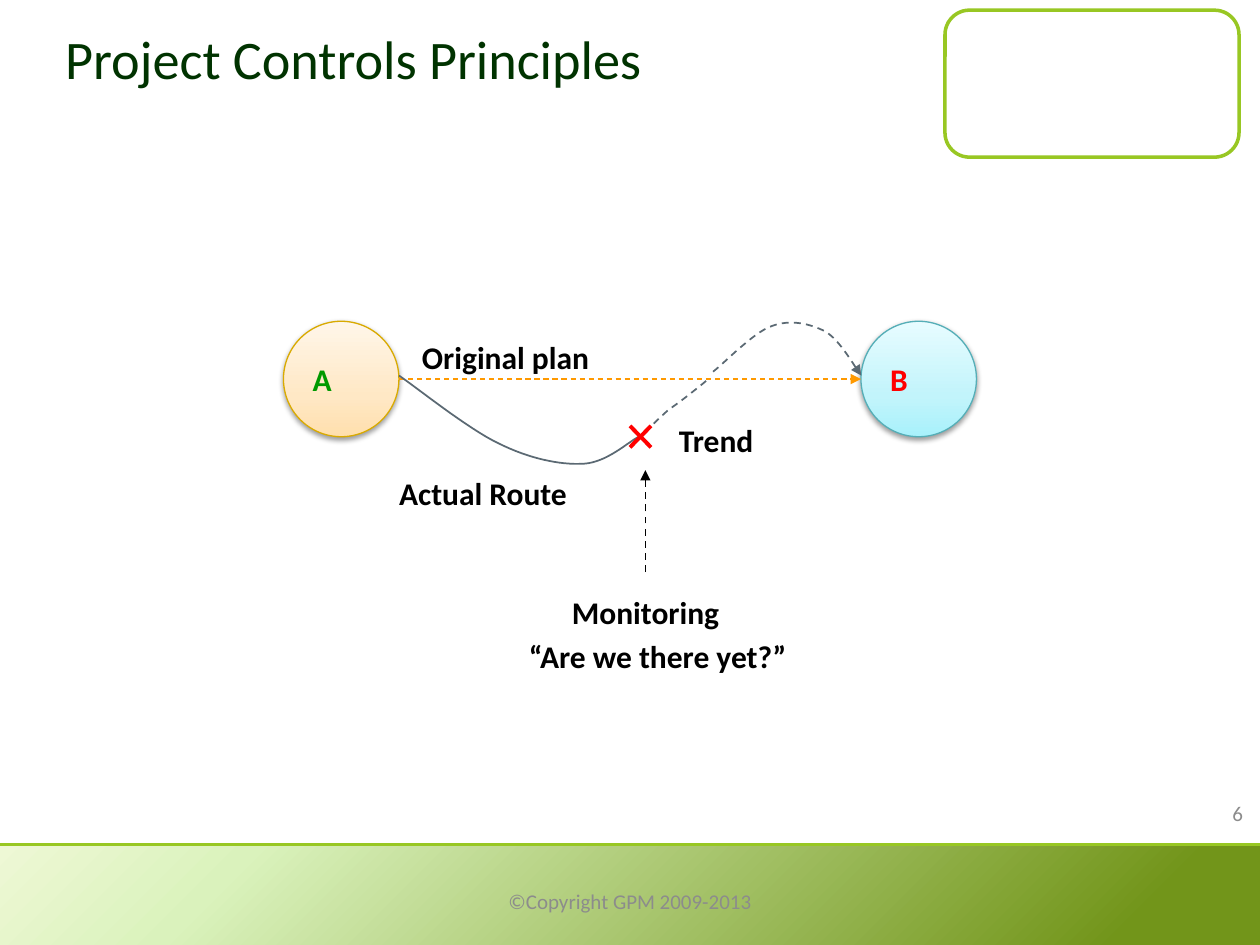
from lxml.etree import SubElement
from pptx import Presentation
from pptx.dml.color import RGBColor
from pptx.enum.dml import MSO_LINE
from pptx.enum.shapes import MSO_CONNECTOR, MSO_SHAPE
from pptx.enum.text import MSO_ANCHOR, PP_ALIGN
from pptx.oxml.ns import qn
from pptx.util import Pt

WHITE = RGBColor(0xFF, 0xFF, 0xFF)
BLACK = RGBColor(0, 0, 0)
RED = RGBColor(0xFF, 0, 0)
GREEN = RGBColor(0, 0x99, 0)
DARK_GREEN = RGBColor(0, 0x33, 0)
LIME = RGBColor(0x98, 0xC7, 0x23)
ORANGE = RGBColor(0xFF, 0x99, 0)
GOLD = RGBColor(0xD9, 0xAA, 0)
TEAL = RGBColor(0x55, 0xAE, 0xB7)
SLATE = RGBColor(0x5B, 0x69, 0x73)
GREY = RGBColor(0x8C, 0x8C, 0x8C)
BAND_STOPS = [(0, RGBColor(0xEE, 0xF8, 0xD5)), (19, RGBColor(0xDA, 0xF2, 0xBC)),
              (89, RGBColor(0x72, 0x95, 0x1A))]
START_STOPS = [(0, RGBColor(0xFF, 0xDF, 0xAD)), (35, RGBColor(0xFF, 0xE8, 0xC5)),
               (100, RGBColor(0xFF, 0xF6, 0xE9))]
GOAL_STOPS = [(0, RGBColor(0xA8, 0xF1, 0xFB)), (35, RGBColor(0xC2, 0xF4, 0xFB)),
              (100, RGBColor(0xE7, 0xFC, 0xFF))]


def bezier_points(start, curves, steps=16):
    points = [start]
    for first, second, end in curves:
        begin = points[-1]
        for step in range(1, steps + 1):
            t = step / steps
            weights = ((1 - t) ** 3, 3 * t * (1 - t) ** 2, 3 * t * t * (1 - t), t ** 3)
            corners = (begin, first, second, end)
            points.append(tuple(sum(w * corner[axis] for w, corner in zip(weights, corners))
                                for axis in (0, 1)))
    return points


class SlideBuilder:
    font = "Calibri"

    def __init__(self, slide):
        self.slide = slide
        self.shapes = slide.shapes

    def format_text(self, frame, text, size, color, bold=False, align=PP_ALIGN.LEFT,
                    anchor=MSO_ANCHOR.MIDDLE):
        frame.text = text
        frame.vertical_anchor = anchor
        para = frame.paragraphs[0]
        para.alignment = align
        span = para.runs[0]
        span.font.name = self.font
        span.font.size = Pt(size)
        span.font.bold = bold
        span.font.color.rgb = color

    def title(self, text, left, top, width, height):
        title = self.shapes.title
        title.left, title.top, title.width, title.height = map(Pt, (left, top, width, height))
        self.format_text(title.text_frame, text, 31, DARK_GREEN)

    def text(self, text, left, top, width, height, **style):
        box = self.shapes.add_textbox(Pt(left), Pt(top), Pt(width), Pt(height))
        box.text_frame.word_wrap = True
        self.format_text(box.text_frame, text, 12, GREY, **style)

    def label(self, text, left, top, width):
        box = self.shapes.add_textbox(Pt(left), Pt(top), Pt(width), Pt(29))
        box.text_frame.word_wrap = False
        self.format_text(box.text_frame, text, 18, BLACK, bold=True, anchor=MSO_ANCHOR.TOP)

    def shape(self, kind, left, top, width, height, line=None, weight=0.75):
        shape = self.shapes.add_shape(kind, Pt(left), Pt(top), Pt(width), Pt(height))
        shape.shadow.inherit = False
        shape.fill.solid()
        shape.fill.fore_color.rgb = WHITE
        if line is None:
            shape.line.fill.background()
        else:
            self.stroke(shape.line, line, weight)
        return shape

    def gradient(self, shape, stops, angle):
        shape.fill.gradient()
        shape.fill.gradient_angle = angle
        stop_list = next(shape._element.spPr.iter(qn("a:gsLst")))
        for stop in list(stop_list):
            stop_list.remove(stop)
        for position, color in stops:
            stop = SubElement(stop_list, qn("a:gs"), pos=str(position * 1000))
            SubElement(stop, qn("a:srgbClr"), val=str(color))

    def milestone(self, text, left, color, line, stops):
        circle = self.shape(MSO_SHAPE.OVAL, left, 183.6, 66, 66, line)
        self.gradient(circle, stops, 90)
        effects = circle._element.spPr.find(qn("a:effectLst"))
        shadow = SubElement(effects, qn("a:outerShdw"), blurRad=str(Pt(3.1)),
                            dist=str(Pt(1.6)), dir="5400000", rotWithShape="0")
        shade = SubElement(shadow, qn("a:srgbClr"), val=str(BLACK))
        SubElement(shade, qn("a:alpha"), val="38000")
        self.format_text(circle.text_frame, text, 18, color, bold=True)

    def stroke(self, line, color, weight, dashed=False, arrow=False):
        line.color.rgb = color
        line.width = Pt(weight)
        if dashed:
            line.dash_style = MSO_LINE.DASH
        if arrow:
            SubElement(line._get_or_add_ln(), qn("a:tailEnd"), type="triangle")

    def line(self, start, end, color, weight, **style):
        line = self.shapes.add_connector(MSO_CONNECTOR.STRAIGHT, *map(Pt, start + end))
        self.stroke(line.line, color, weight, **style)
        SubElement(line._element.spPr, qn("a:effectLst"))

    def route(self, start, curves, **style):
        points = [(Pt(x), Pt(y)) for x, y in bezier_points(start, curves)]
        builder = self.shapes.build_freeform(*points[0])
        builder.add_line_segments(points[1:], close=False)
        path = builder.convert_to_shape()
        path.shadow.inherit = False
        path.fill.background()
        self.stroke(path.line, SLATE, 1, **style)


def main():
    deck = Presentation()
    deck.slide_width, deck.slide_height = Pt(720), Pt(540)
    page = SlideBuilder(deck.slides.add_slide(deck.slide_layouts[5]))

    page.shape(MSO_SHAPE.ROUNDED_RECTANGLE, 540, 5.8, 168, 84, LIME, 2)
    band = page.shape(MSO_SHAPE.RECTANGLE, 0, 483, 720, 59)
    page.gradient(band, BAND_STOPS, 315)
    page.line((0, 482.4), (720, 482.4), LIME, 1.5)
    page.title("Project Controls Principles", 30, 0, 504, 66)

    page.milestone("A", 162, GREEN, GOLD, START_STOPS)
    page.milestone("B", 492, RED, TEAL, GOAL_STOPS)
    page.line((228, 216.6), (492, 216.6), ORANGE, 0.75, dashed=True, arrow=True)

    page.route((228, 214.6), [
        ((237.6, 221), (267, 244.8), (285, 253.4)),
        ((302.4, 262), (319.7, 265.7), (333.4, 265)),
        ((347, 264.2), (358.6, 252.7), (365.8, 249.1))])
    page.route((368.6, 247), [
        ((370.8, 244.8), (376.6, 239), (382.3, 234)),
        ((388.8, 229.7), (399.6, 221), (403.9, 217.4))], dashed=True)
    page.route((407.5, 212.4), [
        ((413.3, 208), (430.6, 190), (440.6, 186.5)),
        ((451.4, 182.2), (463, 185), (471.6, 189.4)),
        ((480.2, 194.4), (488.2, 209.5), (492.2, 214.6))], dashed=True, arrow=True)

    for text, left, top, width in [
            ("Original plan", 234, 189.4, 110), ("Actual Route", 221, 267.1, 111),
            ("Monitoring", 319.7, 335.5, 99.4), ("“Are we there yet?”", 295.2, 360.7, 162.7),
            ("Trend", 380.9, 236.9, 57.6)]:
        page.label(text, left, top, width)

    for start, end in [((360, 243.4), (372, 255.6)), ((372, 243.4), (360, 255.6))]:
        page.line(start, end, RED, 2.25)
    page.line((368.8, 326.9), (368.8, 268.6), BLACK, 1, dashed=True, arrow=True)

    page.text("©Copyright GPM 2009-2013", 246, 500.4, 228, 28.8, align=PP_ALIGN.CENTER)
    page.text("6", 549.4, 450, 168, 28.8, align=PP_ALIGN.RIGHT)
    deck.save("out.pptx")


if __name__ == "__main__":
    main()
